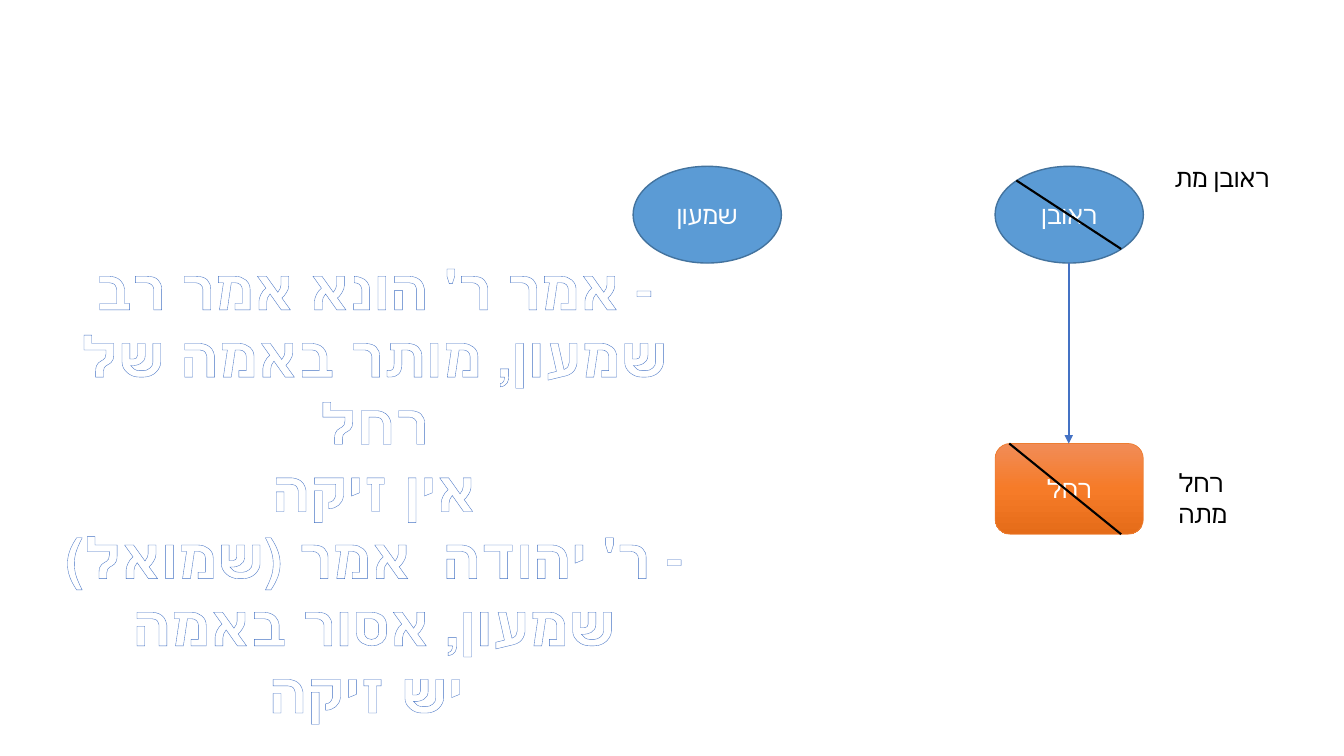
from copy import deepcopy

from lxml import etree
from pptx import Presentation
from pptx.dml.color import RGBColor
from pptx.enum import dml, shapes, text
from pptx.oxml import ns
from pptx.util import Inches, Pt

COLORS = {
    "brother": "5B9BD5", "brother_edge": "43739E",
    "wife_top": "F18C57", "wife_mid": "F67B28", "wife_low": "E56C19",
    "wife_edge": "ED7D31", "link": "4472C4", "hatch": "8FAADC",
    "black": "000000", "white": "FFFFFF",
}
FONT = "Calibri"
OPINIONS = [
    "אמר ר' הונא אמר רב -",
    "שמעון, מותר באמה של רחל",
    "אין זיקה",
    "ר' יהודה  אמר (שמואל) -",
    "שמעון, אסור באמה",
    "יש זיקה ",
]


def rgb(name):
    return RGBColor.from_string(COLORS[name])


def write(frame, lines, size=18, color="black", bold=False, center=True, outlined=False):
    """Fill a text frame with one paragraph per line."""
    frame.word_wrap = True
    for i, line in enumerate(lines):
        paragraph = frame.paragraphs[0] if i == 0 else frame.add_paragraph()
        paragraph.alignment = text.PP_ALIGN.CENTER if center else text.PP_ALIGN.LEFT
        run = paragraph.add_run()
        run.text = line
        font = run.font
        font.size, font.name = Pt(size), FONT
        if bold:
            font.bold = True
        if outlined:
            font.fill.patterned()
            font.fill.pattern = dml.MSO_PATTERN.LIGHT_DOWNWARD_DIAGONAL
            font.fill.fore_color.rgb = rgb("hatch")
            font.fill.back_color.rgb = rgb("white")
            outline(run)
        else:
            font.color.rgb = rgb(color)


def outline(run):
    """Draw the letters with a thin contour line."""
    line = etree.Element(ns.qn("a:ln"), w=str(Pt(1)))
    fill = etree.SubElement(line, ns.qn("a:solidFill"))
    etree.SubElement(fill, ns.qn("a:srgbClr"), val=COLORS["link"])
    run.font._element.insert(0, line)


def label(slide, box, lines, **style):
    caption = slide.shapes.add_textbox(*map(Inches, box))
    write(caption.text_frame, lines, **style)
    caption.text_frame.auto_size = text.MSO_AUTO_SIZE.SHAPE_TO_FIT_TEXT


def person(slide, kind, box, name, edge, edge_width):
    figure = slide.shapes.add_shape(kind, *map(Inches, box))
    figure.shadow.inherit = False
    figure.line.color.rgb = rgb(edge)
    figure.line.width = Pt(edge_width)
    figure.text_frame.vertical_anchor = text.MSO_ANCHOR.MIDDLE
    write(figure.text_frame, [name], color="white")
    return figure


def brother(slide, box, name):
    oval = person(slide, shapes.MSO_SHAPE.OVAL, box, name, "brother_edge", 1)
    oval.fill.solid()
    oval.fill.fore_color.rgb = rgb("brother")


def wife(slide, box, name):
    card = person(slide, shapes.MSO_SHAPE.ROUNDED_RECTANGLE, box, name, "wife_edge", 0.5)
    card.fill.gradient()
    card.fill.gradient_angle = 270
    first = card._element.spPr.find(".//" + ns.qn("a:gs"))
    first.addnext(deepcopy(first))
    shades = ("wife_top", "wife_mid", "wife_low")
    for stop, shade, position in zip(card.fill.gradient_stops, shades, (0, 0.5, 1)):
        stop.color.rgb = rgb(shade)
        stop.position = position


def stroke(slide, start, end, color="black", arrow=False):
    line = slide.shapes.add_connector(
        shapes.MSO_CONNECTOR.STRAIGHT, *map(Inches, (*start, *end)))
    line.line.color.rgb = rgb(color)
    line.line.width = Pt(1.5)
    if arrow:
        etree.SubElement(line.line._get_or_add_ln(), ns.qn("a:tailEnd"), type="triangle")
    etree.SubElement(line._element.spPr, ns.qn("a:effectLst"))


def family(slide, left, top):
    """Two brothers, with the elder one's wife below him."""
    width, oval_height, card_height = 1.47, 0.96, 0.9
    elder_left, wife_top = left + 3.59, top + 2.75
    brother(slide, (elder_left, top, width, oval_height), "ראובן")
    brother(slide, (left, top, width, oval_height), "שמעון")
    wife(slide, (elder_left, wife_top, width, card_height), "רחל")

    # Marriage arrow
    middle = elder_left + 0.73
    stroke(slide, (middle, top + oval_height), (middle, wife_top), "link", arrow=True)

    # Strikes through the two who died, with captions beside them
    strike_right = elder_left + 1.25
    stroke(slide, (elder_left + 0.21, top + 0.14), (strike_right, top + 0.82))
    label(slide, (elder_left + width, top - 0.09, 1.56, 0.4), ["ראובן מת"])
    stroke(slide, (elder_left + 0.14, wife_top), (strike_right, wife_top + card_height))
    label(slide, (elder_left + 1.72, wife_top + 0.19, 1.15, 0.4), ["רחל מתה"], center=False)


def opinions(slide, box):
    label(slide, box, OPINIONS, size=40, bold=True, outlined=True)


def main():
    deck = Presentation()
    deck.slide_width, deck.slide_height = Inches(13.33), Inches(7.5)
    slide = deck.slides.add_slide(deck.slide_layouts[6])
    family(slide, 6.28, 1.65)
    opinions(slide, (0.33, 2.47, 6.76, 4.14))
    deck.save("out.pptx")


if __name__ == "__main__":
    main()
